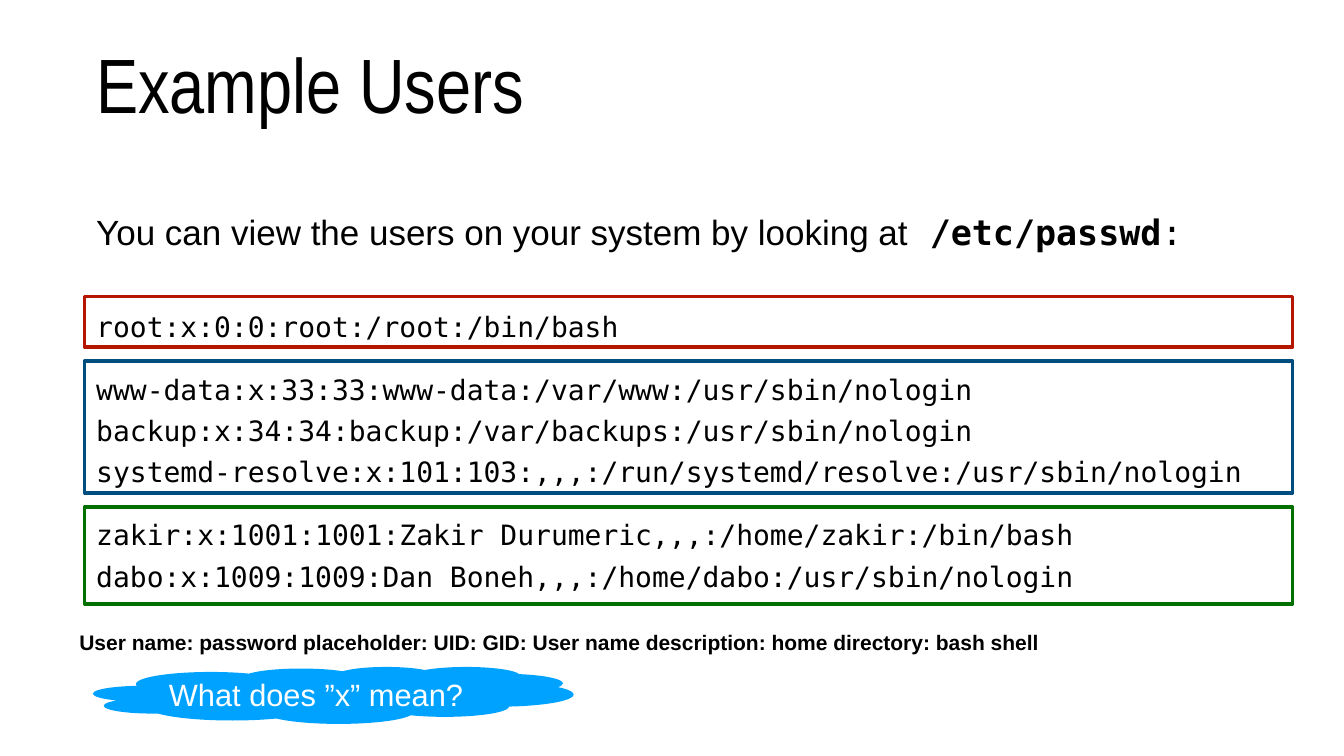
from dataclasses import dataclass

from pptx import Presentation
from pptx.dml.color import RGBColor
from pptx.enum.shapes import MSO_SHAPE
from pptx.enum.text import MSO_ANCHOR, PP_ALIGN
from pptx.util import Pt

EMU_PER_PX = 9144  # 100 px to the inch


@dataclass(frozen=True)
class Theme:
    text: str = "000000"
    inverse: str = "FFFFFF"
    root: str = "B51600"
    service: str = "004D80"
    person: str = "027001"
    cloud: str = "00A2FF"
    title_font: str = "Arial Narrow"
    body_font: str = "Arial"
    code_font: str = "DejaVu Sans Mono"
    title_size: int = 110
    intro_size: int = 50
    question_size: int = 44
    code_size: int = 40
    legend_size: int = 30
    frame_width: int = 5


def px(*lengths):
    return [length * EMU_PER_PX for length in lengths]


class SlideBuilder:
    def __init__(self, slide, theme):
        self.slide = slide
        self.theme = theme

    def style_run(self, run, size, font, color=None, bold=False):
        run.font.size = Pt(size)
        run.font.name = font
        run.font.bold = bold
        run.font.color.rgb = RGBColor.from_string(color or self.theme.text)

    def prepare_frame(self, text_frame, margin, anchor, wrap=True):
        text_frame.margin_left = text_frame.margin_right = margin * EMU_PER_PX
        text_frame.margin_top = text_frame.margin_bottom = margin * EMU_PER_PX
        text_frame.vertical_anchor = anchor
        text_frame.word_wrap = wrap

    def text_box(self, box, anchor=MSO_ANCHOR.MIDDLE, wrap=True):
        text_frame = self.slide.shapes.add_textbox(*px(*box)).text_frame
        self.prepare_frame(text_frame, 6, anchor, wrap)
        return text_frame

    def line_of_text(self, text_frame, text, size, font, color=None,
                     bold=False, align=PP_ALIGN.LEFT):
        text_frame.text = text
        paragraph = text_frame.paragraphs[0]
        paragraph.alignment = align
        self.style_run(paragraph.runs[0], size, font, color, bold)
        return paragraph

    def user_listing(self, box, intro, path, groups):
        """Write the intro line and the groups of user entries in one text box."""
        theme = self.theme
        text_frame = self.text_box(box, MSO_ANCHOR.TOP)
        paragraph = self.line_of_text(text_frame, intro, theme.intro_size, theme.body_font)
        for text, bold in ((" " + path, True), (":", False)):
            run = paragraph.add_run()
            run.text = text
            self.style_run(run, theme.intro_size, theme.code_font, bold=bold)
        for group_index, entries in enumerate(groups):
            group_gap = 42 if group_index else 81
            for entry_index, entry in enumerate(entries):
                paragraph = text_frame.add_paragraph()
                paragraph.text = entry
                paragraph.space_before = Pt(11 if entry_index else group_gap)
                self.style_run(paragraph.runs[0], theme.code_size, theme.code_font)

    def frame(self, top, height, color):
        shape = self.slide.shapes.add_shape(MSO_SHAPE.RECTANGLE, *px(168, top, 2397, height))
        shape.shadow.inherit = False
        shape.fill.background()
        shape.line.color.rgb = RGBColor.from_string(color)
        shape.line.width = Pt(self.theme.frame_width)

    def cloud(self, box, text):
        theme = self.theme
        shape = self.slide.shapes.add_shape(MSO_SHAPE.CLOUD, *px(*box))
        shape.shadow.inherit = False
        shape.fill.solid()
        shape.fill.fore_color.rgb = RGBColor.from_string(theme.cloud)
        shape.line.fill.background()
        self.prepare_frame(shape.text_frame, 0, MSO_ANCHOR.MIDDLE)
        self.line_of_text(shape.text_frame, text, theme.question_size, theme.body_font,
                          theme.inverse, align=PP_ALIGN.CENTER)


USER_GROUPS = [
    ["root:x:0:0:root:/root:/bin/bash"],
    ["www-data:x:33:33:www-data:/var/www:/usr/sbin/nologin",
     "backup:x:34:34:backup:/var/backups:/usr/sbin/nologin",
     "systemd-resolve:x:101:103:,,,:/run/systemd/resolve:/usr/sbin/nologin"],
    ["zakir:x:1001:1001:Zakir Durumeric,,,:/home/zakir:/bin/bash",
     "dabo:x:1009:1009:Dan Boneh,,,:/home/dabo:/usr/sbin/nologin"],
]
LEGEND = ("User name: password placeholder: UID: GID: "
          "User name description: home directory: bash shell ")


def main():
    presentation = Presentation()
    presentation.slide_width, presentation.slide_height = px(2667, 1500)
    theme = Theme()
    builder = SlideBuilder(
        presentation.slides.add_slide(presentation.slide_layouts[6]), theme)

    builder.line_of_text(builder.text_box((185, 39, 2297, 250)), "Example Users",
                         theme.title_size, theme.title_font)
    builder.user_listing((185, 412, 2317, 780),
                         "You can view the users on your system by looking at",
                         "/etc/passwd", USER_GROUPS)
    for top, height, color in ((716, 262, theme.service),
                               (1006, 192, theme.person),
                               (588, 101, theme.root)):
        builder.frame(top, height, color)
    builder.line_of_text(builder.text_box((146, 1242, 1940, 62), wrap=False), LEGEND,
                         theme.legend_size, theme.body_font, bold=True,
                         align=PP_ALIGN.CENTER)
    builder.cloud((185, 1323, 953, 113), "What does ”x” mean?")
    presentation.save("out.pptx")


if __name__ == "__main__":
    main()
